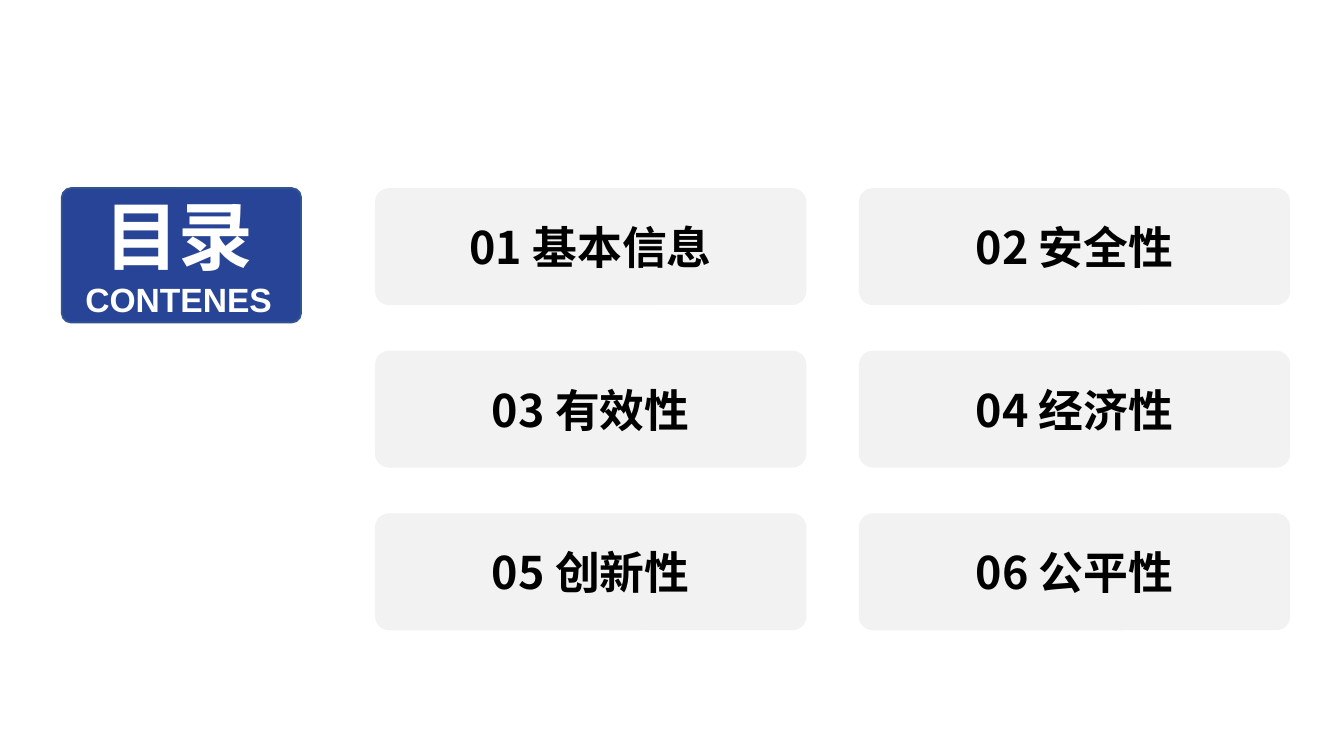
from lxml import etree
from pptx import Presentation
from pptx import util as u
from pptx.dml.color import RGBColor
from pptx.enum import shapes, text
from pptx.oxml.ns import qn

COLORS = {"blue": "284496", "edge": "325491", "card": "F2F2F2",
          "ink": "000000", "white": "FFFFFF"}
CJK = "Noto Sans CJK SC"
TOPICS = ["基本信息", "安全性", "有效性", "经济性", "创新性", "公平性"]

# Card grid, in inches
LEFT, TOP = 2.79, 1.4
CARD_W, CARD_H = 3.21, 0.87
COLUMN_STEP, ROW_STEP = 3.6, 1.21


def add_panel(left, top, width, height, corner, fill):
    panel = slide.shapes.add_shape(
        shapes.MSO_SHAPE.ROUNDED_RECTANGLE,
        *(u.Inches(n) for n in (left, top, width, height)))
    panel.adjustments[0] = corner
    panel.shadow.inherit = False
    panel.fill.solid()
    panel.fill.fore_color.rgb = RGBColor.from_string(COLORS[fill])
    panel.line.fill.background()
    return panel


def style(paragraph, size, latin, color):
    """Centre the paragraph in bold, with the CJK font for Chinese glyphs."""
    paragraph.alignment = text.PP_ALIGN.CENTER
    font = paragraph.font
    font.size, font.bold, font.name = u.Pt(size), True, latin
    font.color.rgb = RGBColor.from_string(COLORS[color])
    etree.SubElement(font._element, qn("a:ea"), typeface=CJK)


prs = Presentation()
prs.slide_width = u.Inches(10)
prs.slide_height = prs.slide_width * 9 // 16
slide = prs.slides.add_slide(prs.slide_layouts[6])

for index, topic in enumerate(TOPICS):
    row, column = divmod(index, 2)
    card = add_panel(LEFT + column * COLUMN_STEP, TOP + row * ROW_STEP,
                     CARD_W, CARD_H, 0.12, "card")
    card.text_frame.vertical_anchor = text.MSO_ANCHOR.MIDDLE
    card.text_frame.text = f"{index + 1:02} {topic}"
    style(card.text_frame.paragraphs[0], 24, CJK, "ink")

badge = add_panel(0.46, TOP, 1.78, 1, 0.07, "blue")
badge.line.color.rgb = RGBColor.from_string(COLORS["edge"])
badge.line.width = u.Pt(1)

heading = slide.shapes.add_textbox(
    *(u.Inches(n) for n in (0.53, 1.36, 1.6, 1.08))).text_frame
heading.word_wrap = False
heading.auto_size = text.MSO_AUTO_SIZE.SHAPE_TO_FIT_TEXT
heading.text = "目录\nCONTENES"
for line, size in zip(heading.paragraphs, (40, 18)):
    style(line, size, "Arial", "white")

prs.save("out.pptx")
